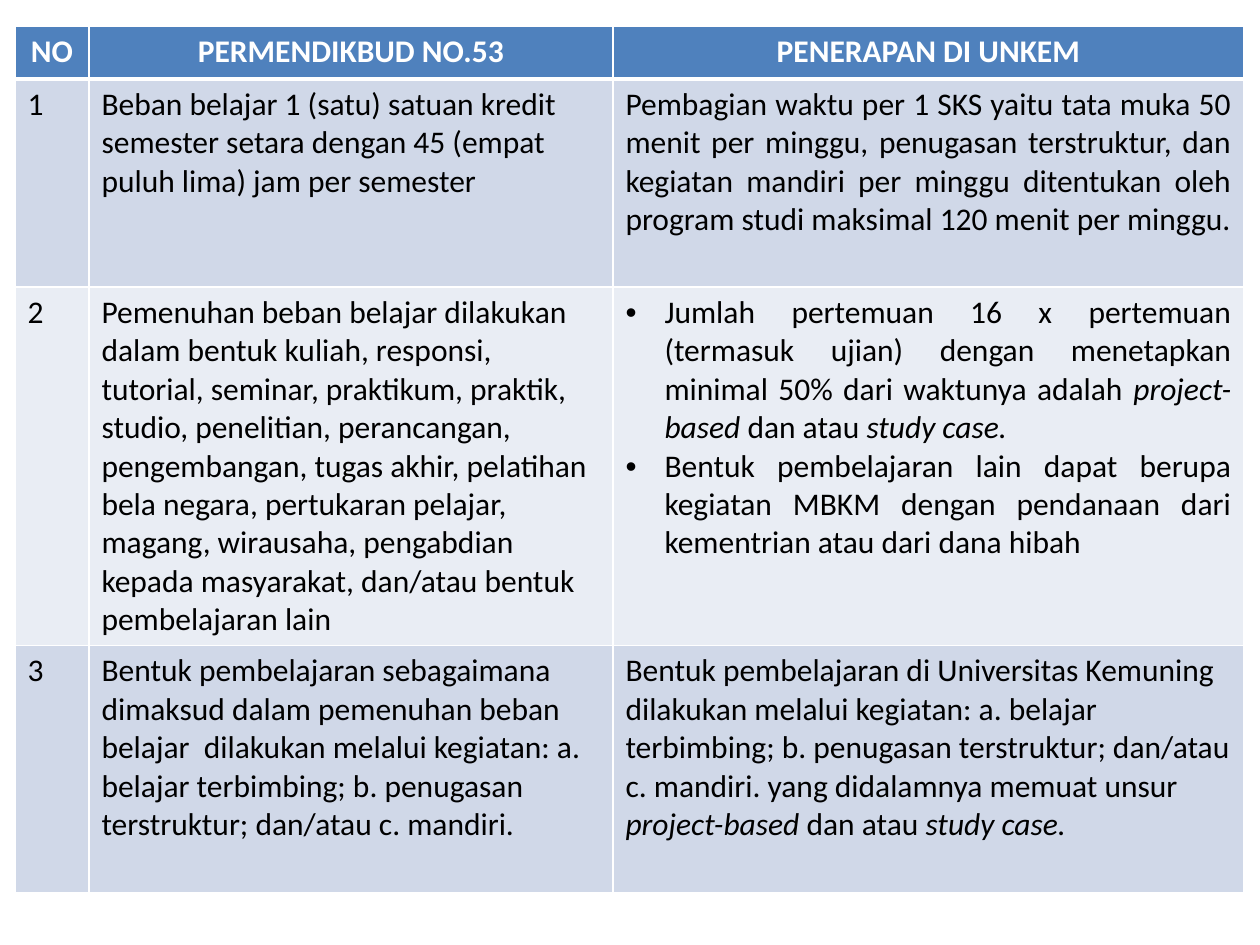
from dataclasses import dataclass

from lxml.etree import SubElement
from pptx import Presentation
from pptx.dml.color import RGBColor
from pptx.enum.text import PP_ALIGN as Align
from pptx.oxml import parse_xml
from pptx.oxml.ns import nsdecls, qn
from pptx.util import Emu, Pt

# Content: a cell is a list of paragraphs, a paragraph a list of (text, italic)
HEADERS = ["NO", "PERMENDIKBUD NO.53", "PENERAPAN DI UNKEM"]
PROJECT_AND_CASE = [("project-based ", True), ("dan atau ", False), ("study case.", True)]
ROWS = [
    {
        "rule": "Beban belajar 1 (satu) satuan kredit semester setara dengan 45 "
                "(empat puluh lima) jam per semester",
        "practice": [[("Pembagian waktu per 1 SKS yaitu tata muka 50 menit per minggu, "
                       "penugasan terstruktur, dan kegiatan mandiri per minggu ditentukan "
                       "oleh program studi maksimal 120 menit per minggu.", False)]],
        "align": Align.JUSTIFY,
        "bullets": False,
    },
    {
        "rule": "Pemenuhan beban belajar dilakukan dalam bentuk kuliah, responsi, tutorial, "
                "seminar, praktikum, praktik, studio, penelitian, perancangan, pengembangan, "
                "tugas akhir, pelatihan bela negara, pertukaran pelajar, magang, wirausaha, "
                "pengabdian kepada masyarakat, dan/atau bentuk pembelajaran lain",
        "practice": [
            [("Jumlah pertemuan 16 x pertemuan (termasuk ujian) dengan menetapkan "
              "minimal 50% dari waktunya adalah ", False), *PROJECT_AND_CASE],
            [("Bentuk pembelajaran lain dapat berupa kegiatan MBKM dengan pendanaan "
              "dari kementrian atau dari dana hibah", False)],
        ],
        "align": Align.JUSTIFY,
        "bullets": True,
    },
    {
        "rule": "Bentuk pembelajaran sebagaimana dimaksud dalam pemenuhan beban belajar  "
                "dilakukan melalui kegiatan: a. belajar terbimbing; b. penugasan "
                "terstruktur; dan/atau c. mandiri.",
        "practice": [[("Bentuk pembelajaran di Universitas Kemuning dilakukan melalui "
                       "kegiatan: a. belajar terbimbing; b. penugasan terstruktur; dan/atau "
                       "c. mandiri. yang didalamnya memuat unsur ", False),
                      *PROJECT_AND_CASE]],
        "align": Align.LEFT,
        "bullets": False,
    },
]

# Layout in px
SLIDE_SIZE = (1260, 945)
TABLE_LEFT, TABLE_TOP = 15, 26
COLUMN_WIDTHS = [74, 524, 631]
ROW_HEIGHTS = [53, 208, 354, 247]
BULLET_INDENT = 39


@dataclass(frozen=True)
class Theme:
    font: str = "Calibri"
    size: int = 18
    header_fill: str = "4F81BD"
    header_text: str = "FFFFFF"
    body_text: str = "000000"
    bands: tuple = ("D0D8E8", "E9EDF4")
    border: str = "FFFFFF"
    thin: int = 1
    thick: int = 3


THEME = Theme()


def px(length):
    return Emu(round(length * 914400 / 126))


def set_borders(cell, top, bottom):
    widths = {"lnL": THEME.thin, "lnR": THEME.thin, "lnT": top, "lnB": bottom}
    properties = cell._tc.get_or_add_tcPr()
    for position, (tag, width) in enumerate(widths.items()):
        properties.insert(position, parse_xml(
            f'<a:{tag} {nsdecls("a")} w="{Pt(width)}"><a:solidFill>'
            f'<a:srgbClr val="{THEME.border}"/></a:solidFill></a:{tag}>'))


def add_bullet(paragraph):
    properties = paragraph._p.get_or_add_pPr()
    properties.set("marL", str(px(BULLET_INDENT)))
    properties.set("indent", str(-px(BULLET_INDENT)))
    SubElement(properties, qn("a:buFont")).set("typeface", "Arial")
    SubElement(properties, qn("a:buChar")).set("char", "•")


def fill_cell(cell, paragraphs, fill, color, align, bold=False, bullets=False):
    cell.fill.solid()
    cell.fill.fore_color.rgb = RGBColor.from_string(fill)
    frame = cell.text_frame
    for index, runs in enumerate(paragraphs):
        paragraph = frame.add_paragraph() if index else frame.paragraphs[0]
        paragraph.alignment = align
        if bullets:
            add_bullet(paragraph)
        font = paragraph.font
        font.name, font.size, font.bold = THEME.font, Pt(THEME.size), bold
        font.color.rgb = RGBColor.from_string(color)
        for text, italic in runs:
            run = paragraph.add_run()
            run.text = text
            if italic:
                run.font.italic = True


def main():
    presentation = Presentation()
    presentation.slide_width, presentation.slide_height = map(px, SLIDE_SIZE)
    slide = presentation.slides.add_slide(presentation.slide_layouts[6])

    # Table grid
    table = slide.shapes.add_table(
        len(ROW_HEIGHTS), len(COLUMN_WIDTHS), px(TABLE_LEFT), px(TABLE_TOP),
        px(sum(COLUMN_WIDTHS)), px(sum(ROW_HEIGHTS))).table
    for column, width in zip(table.columns, COLUMN_WIDTHS):
        column.width = px(width)
    for row, height in zip(table.rows, ROW_HEIGHTS):
        row.height = px(height)

    # Header row
    for column, title in enumerate(HEADERS):
        cell = table.cell(0, column)
        fill_cell(cell, [[(title, False)]], THEME.header_fill, THEME.header_text,
                  Align.CENTER, bold=True)
        set_borders(cell, THEME.thin, THEME.thick)

    # Numbered body rows
    for number, row in enumerate(ROWS, start=1):
        fill = THEME.bands[(number - 1) % len(THEME.bands)]
        for column, text in enumerate([str(number), row["rule"]]):
            fill_cell(table.cell(number, column), [[(text, False)]], fill,
                      THEME.body_text, Align.LEFT)
        fill_cell(table.cell(number, 2), row["practice"], fill, THEME.body_text,
                  row["align"], bullets=row["bullets"])
        top = THEME.thick if number == 1 else THEME.thin
        for cell in table.rows[number].cells:
            set_borders(cell, top, THEME.thin)

    presentation.save("out.pptx")


if __name__ == "__main__":
    main()
